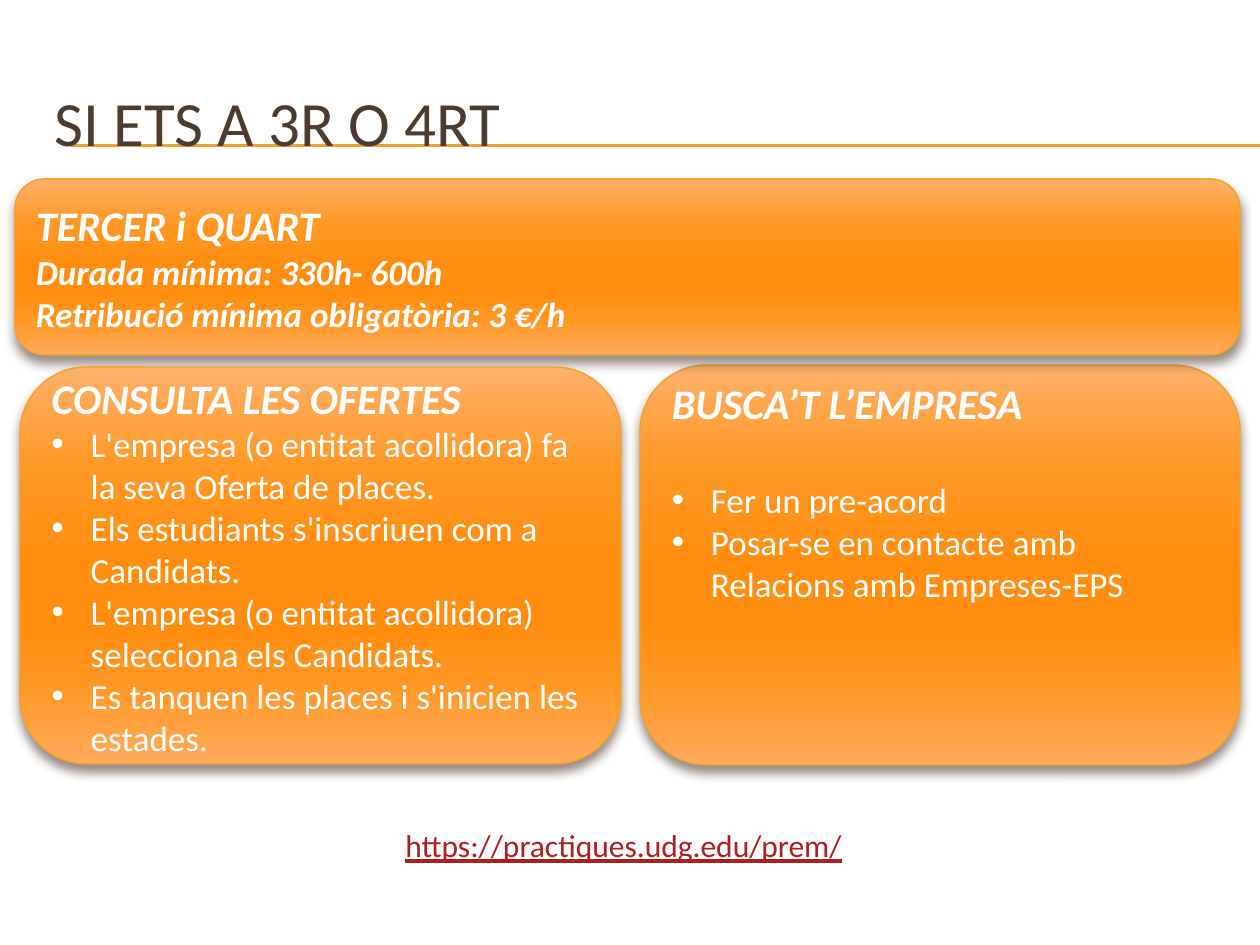
from lxml import etree
from pptx import Presentation
from pptx.dml.color import RGBColor
from pptx.enum.shapes import MSO_CONNECTOR, MSO_SHAPE
from pptx.enum.text import MSO_ANCHOR, PP_ALIGN
from pptx.oxml import parse_xml
from pptx.oxml.ns import nsdecls, qn
from pptx.util import Emu, Pt

DPI = 126
FONT = "Calibri"
WHITE = RGBColor(0xFF, 0xFF, 0xFF)
BROWN = RGBColor(0x4E, 0x3B, 0x30)
GOLD = RGBColor(0xF0, 0xA2, 0x2E)
RED = RGBColor(0xAD, 0x1F, 0x1F)
STOPS = [
    (0, RGBColor(0xFF, 0xB1, 0x6A)),
    (25, RGBColor(0xFF, 0x98, 0x26)),
    (50, RGBColor(0xFF, 0x8D, 0x0F)),
    (65, RGBColor(0xFF, 0x8D, 0x0F)),
    (80, RGBColor(0xFF, 0x97, 0x24)),
    (100, RGBColor(0xFF, 0xAA, 0x5C)),
]


def px(n):
    return Emu(round(n * 914400 / DPI))


def add_run(p, text, size, color, bold=False, italic=False, underline=False):
    r = p.add_run()
    r.text = text
    f = r.font
    f.name, f.size, f.color.rgb = FONT, Pt(size), color
    f.bold, f.italic, f.underline = bold, italic, underline


def add_bullet(p):
    pPr = p._p.get_or_add_pPr()
    pPr.set("marL", str(px(39)))
    pPr.set("indent", str(-px(39)))
    etree.SubElement(pPr, qn("a:buFont")).set("typeface", "Arial")
    etree.SubElement(pPr, qn("a:buChar")).set("char", "•")


def add_glow_fill(sp):
    """Vertical orange gradient with a soft shadow below."""
    sp.fill.gradient()
    sp.fill.gradient_angle = 270
    gs_list = sp._element.spPr.find(qn("a:gradFill")).find(qn("a:gsLst"))
    for gs in list(gs_list):
        gs_list.remove(gs)
    for pos, color in STOPS:
        gs_list.append(parse_xml(
            f'<a:gs {nsdecls("a")} pos="{pos * 1000}"><a:srgbClr val="{color}"/></a:gs>'))
    sp.shadow.inherit = False
    sp._element.spPr.find(qn("a:effectLst")).append(parse_xml(
        f'<a:outerShdw {nsdecls("a")} blurRad="{Pt(6)}" dist="{Pt(4)}" dir="5400000" '
        f'rotWithShape="0"><a:srgbClr val="{BROWN}"><a:alpha val="60000"/></a:srgbClr>'
        '</a:outerShdw>'))


def add_card(s, box, heading, lines=(), bullets=(), gap=0, bottom=6):
    sp = s.shapes.add_shape(MSO_SHAPE.ROUNDED_RECTANGLE, *map(px, box))
    add_glow_fill(sp)
    sp.line.color.rgb, sp.line.width = GOLD, Pt(0.79)
    tf = sp.text_frame
    tf.word_wrap = True
    tf.vertical_anchor = MSO_ANCHOR.MIDDLE
    tf.margin_bottom = px(bottom)
    add_run(tf.paragraphs[0], heading, 24, WHITE, bold=True, italic=True)
    for text in lines:
        add_run(tf.add_paragraph(), text, 20, WHITE, bold=True, italic=True)
    for i, text in enumerate(bullets):
        p = tf.add_paragraph()
        add_bullet(p)
        if gap and i == 0:
            p.space_before = Pt(gap)
        add_run(p, text, 20, WHITE)
    for p in tf.paragraphs:
        p.alignment = PP_ALIGN.LEFT


def add_heading(s, box, text):
    x, y, w, h = box
    # Double rule running to the slide's right edge
    for rule_y in (y + 82, y + 83):
        ln = s.shapes.add_connector(MSO_CONNECTOR.STRAIGHT, px(x + 29), px(rule_y),
                                    px(1260), px(rule_y))
        ln.line.color.rgb, ln.line.width = GOLD, Pt(0.75)
        etree.SubElement(ln._element.spPr, qn("a:effectLst"))
    tf = s.shapes.add_textbox(*map(px, box)).text_frame
    tf.word_wrap = True
    tf.vertical_anchor = MSO_ANCHOR.MIDDLE
    add_run(tf.paragraphs[0], text, 36, BROWN)


def add_address(s, box, text):
    tf = s.shapes.add_textbox(*map(px, box)).text_frame
    tf.word_wrap = False
    add_run(tf.paragraphs[0], text, 18, RED, underline=True)


def main():
    prs = Presentation()
    prs.slide_width, prs.slide_height = px(1260), px(945)
    s = prs.slides.add_slide(prs.slide_layouts[6])

    add_heading(s, (42, 63, 1197, 116), "SI ETS A 3R O 4RT")

    # Right card
    add_card(s, (640, 365, 600, 400), "BUSCA’T L’EMPRESA", bullets=[
        "Fer un pre-acord",
        "Posar-se en contacte amb Relacions amb Empreses-EPS",
    ], gap=29, bottom=154)

    # Top card
    add_card(s, (15, 179, 1225, 176), "TERCER i QUART", lines=[
        "Durada mínima: 330h- 600h",
        "Retribució mínima obligatòria: 3 €/h",
    ])

    # Left card
    add_card(s, (20, 367, 601, 397), "CONSULTA LES OFERTES", bullets=[
        "L'empresa (o entitat acollidora) fa la seva Oferta de places.",
        "Els estudiants s'inscriuen com a Candidats.",
        "L'empresa (o entitat acollidora) selecciona els Candidats.",
        "Es tanquen les places i s'inicien les estades.",
    ])

    add_address(s, (393, 820, 469, 89), "https://practiques.udg.edu/prem/")
    prs.save("out.pptx")


if __name__ == "__main__":
    main()
